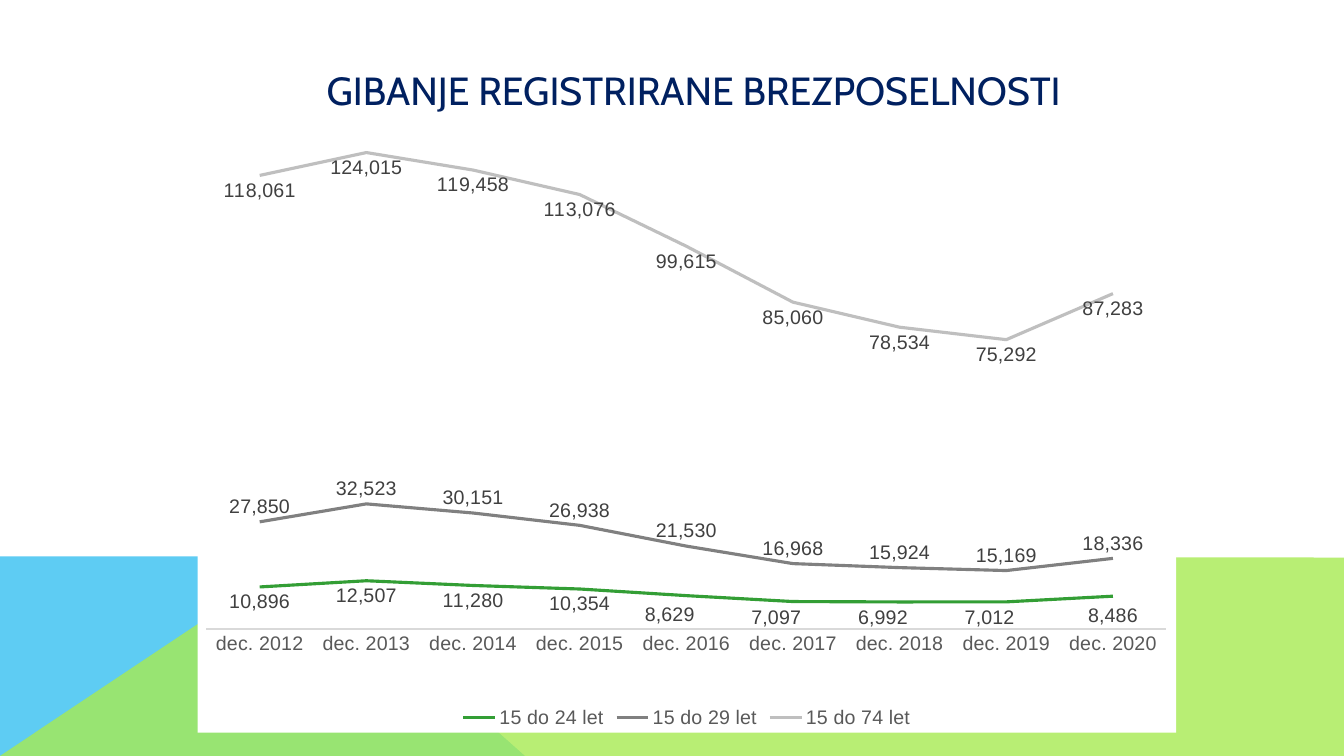
from dataclasses import dataclass

from lxml import etree
from pptx import Presentation
from pptx.chart.data import CategoryChartData
from pptx.dml.color import RGBColor
from pptx.enum.chart import (XL_CHART_TYPE, XL_LABEL_POSITION,
                             XL_LEGEND_POSITION, XL_TICK_LABEL_POSITION,
                             XL_TICK_MARK)
from pptx.enum.text import MSO_ANCHOR, PP_ALIGN
from pptx.oxml import parse_xml
from pptx.oxml.ns import nsdecls, qn
from pptx.util import Cm, Pt

LINE = XL_CHART_TYPE.LINE
ABOVE, BELOW = XL_LABEL_POSITION.ABOVE, XL_LABEL_POSITION.BELOW
BOTTOM = XL_LEGEND_POSITION.BOTTOM
NO_LABELS = XL_TICK_LABEL_POSITION.NONE
NO_TICK = XL_TICK_MARK.NONE
MIDDLE, LEFT = MSO_ANCHOR.MIDDLE, PP_ALIGN.LEFT


@dataclass(frozen=True)
class Theme:
    white: str = "FFFFFF"
    blue: str = "5ECCF3"
    lime: str = "A7EA52"
    navy: str = "002060"
    axis: str = "D9D9D9"
    text: str = "595959"
    label: str = "404040"
    green: str = "339E35"
    grey: str = "808080"
    silver: str = "BFBFBF"
    head_font: str = "Cabin"
    body_font: str = "Arial"
    head_size: float = 28
    body_size: float = 14
    base_size: float = 10
    trend_width: float = 2.25
    axis_width: float = 1.5


@dataclass(frozen=True)
class Panel:
    points: tuple
    color: str
    alpha: int = 100


@dataclass(frozen=True)
class Trend:
    name: str
    values: tuple
    color: str
    place: object


THEME = Theme()
WIDTH, HEIGHT = 33.87, 19.05
NUMBER = "#,##0"

PANELS = (
    Panel(((0, HEIGHT), (0, 14.02), (7.57, 14.02), (13.23, HEIGHT)), THEME.blue),
    Panel(((0, HEIGHT), (7.54, 14.02), (WIDTH, 14.05), (WIDTH, HEIGHT)),
          THEME.lime, 80),
)
TRENDS = (
    Trend("15 do 24 let",
          (10896, 12507, 11280, 10354, 8629, 7097, 6992, 7012, 8486),
          THEME.green, BELOW),
    Trend("15 do 29 let",
          (27850, 32523, 30151, 26938, 21530, 16968, 15924, 15169, 18336),
          THEME.grey, ABOVE),
    Trend("15 do 74 let",
          (118061, 124015, 119458, 113076, 99615, 85060, 78534, 75292, 87283),
          THEME.silver, BELOW),
)
# Label shifts of the youngest group, as shares of the chart's size
SHIFTS = {4: (-0.017, 0.006), 5: (-0.017, 0.001), 6: (-0.017, 0.001),
          7: (-0.017, 0.001), 8: (0, 0.008)}


def rgb(color: str) -> RGBColor:
    return RGBColor.from_string(color)


def style(font, size: float, color: str, face: str = THEME.body_font) -> None:
    font.size, font.name = Pt(size), face
    font.color.rgb = rgb(color)


def layout(**parts) -> etree.ElementBase:
    """Build a manual chart layout from its parts, in schema order."""
    body = "".join(f'<c:{key} val="{val}"/>' for key, val in parts.items())
    return parse_xml(f'<c:layout {nsdecls("c")}><c:manualLayout>{body}'
                     '</c:manualLayout></c:layout>')


def add_panel(slide, panel: Panel) -> None:
    first, *rest = [(Cm(x), Cm(y)) for x, y in panel.points]
    pen = slide.shapes.build_freeform(*first)
    pen.add_line_segments(rest, close=True)
    shape = pen.convert_to_shape()
    shape.shadow.inherit = False
    shape.line.fill.background()
    shape.fill.solid()
    shape.fill.fore_color.rgb = rgb(panel.color)
    if panel.alpha < 100:
        tint = shape.fill._xPr.find(".//" + qn("a:srgbClr"))
        etree.SubElement(tint, qn("a:alpha")).set("val", str(panel.alpha * 1000))


def add_title(slide, text: str) -> None:
    frame = slide.shapes.add_textbox(
        Cm(7.98), Cm(1.5), Cm(19.43), Cm(1.52)).text_frame
    frame.word_wrap = True
    frame.vertical_anchor = MIDDLE
    frame.text = text
    line = frame.paragraphs[0]
    line.alignment = LEFT
    style(line.runs[0].font, THEME.head_size, THEME.navy, THEME.head_font)


def style_axes(chart) -> None:
    cat, val = chart.category_axis, chart.value_axis
    for axis in (cat, val):
        axis.major_tick_mark = axis.minor_tick_mark = NO_TICK
        axis.has_major_gridlines = False
    style(cat.tick_labels.font, THEME.body_size, THEME.text)
    cat.format.line.width = Pt(THEME.axis_width)
    cat.format.line.color.rgb = rgb(THEME.axis)
    val.minimum_scale, val.maximum_scale, val.major_unit = 0, 125000, 50000
    val.tick_label_position = NO_LABELS
    val.format.line.fill.background()


def style_trend(series, trend: Trend) -> None:
    series.smooth = False
    series.format.line.width = Pt(THEME.trend_width)
    series.format.line.color.rgb = rgb(trend.color)
    labels = series.data_labels
    labels.show_value = True
    labels.position = trend.place
    labels.number_format = NUMBER
    labels.number_format_is_linked = False
    style(labels.font, THEME.body_size, THEME.label)


def shift_labels(series) -> None:
    for spot, (dx, dy) in SHIFTS.items():
        label = series.points[spot].data_label
        style(label.font, THEME.body_size, THEME.label)
        label.position = BELOW
    for item in series.data_labels._element.findall(qn("c:dLbl")):
        mark = item.find(qn("c:idx"))
        dx, dy = SHIFTS[int(mark.get("val"))]
        mark.addnext(layout(x=dx, y=dy))


def add_trends(slide) -> None:
    data = CategoryChartData(number_format=NUMBER)
    data.categories = [f"dec. {year}" for year in range(2012, 2021)]
    for trend in TRENDS:
        data.add_series(trend.name, trend.values)
    chart = slide.shapes.add_chart(
        LINE, Cm(4.98), Cm(3.45), Cm(24.66), Cm(15.01), data).chart
    chart.has_title = False
    style(chart.font, THEME.base_size, THEME.text)
    chart.has_legend = True
    chart.legend.position = BOTTOM
    chart.legend.include_in_layout = False
    style(chart.legend.font, THEME.body_size, THEME.text)
    style_axes(chart)
    plot = chart.plots[0]
    plot.vary_by_categories = False
    for series, trend in zip(plot.series, TRENDS):
        style_trend(series, trend)
    shift_labels(plot.series[0])

    root = chart._chartSpace.find(qn("c:chart"))
    area = root.find(qn("c:plotArea"))
    for old in area.findall(qn("c:layout")):
        area.remove(old)
    area.insert(0, layout(layoutTarget="inner", xMode="edge", yMode="edge",
                          x=0.009, y=0.02, w=0.981, h=0.806))
    root.addnext(parse_xml(
        f'<c:spPr {nsdecls("c", "a")}><a:solidFill><a:srgbClr val="{THEME.white}"/>'
        '</a:solidFill><a:ln><a:noFill/></a:ln></c:spPr>'))


def main() -> None:
    deck = Presentation()
    deck.slide_width, deck.slide_height = Cm(WIDTH), Cm(HEIGHT)
    slide = deck.slides.add_slide(deck.slide_layouts[6])
    for panel in PANELS:
        add_panel(slide, panel)
    add_title(slide, "GIBANJE REGISTRIRANE BREZPOSELNOSTI")
    add_trends(slide)
    deck.save("out.pptx")


if __name__ == "__main__":
    main()
